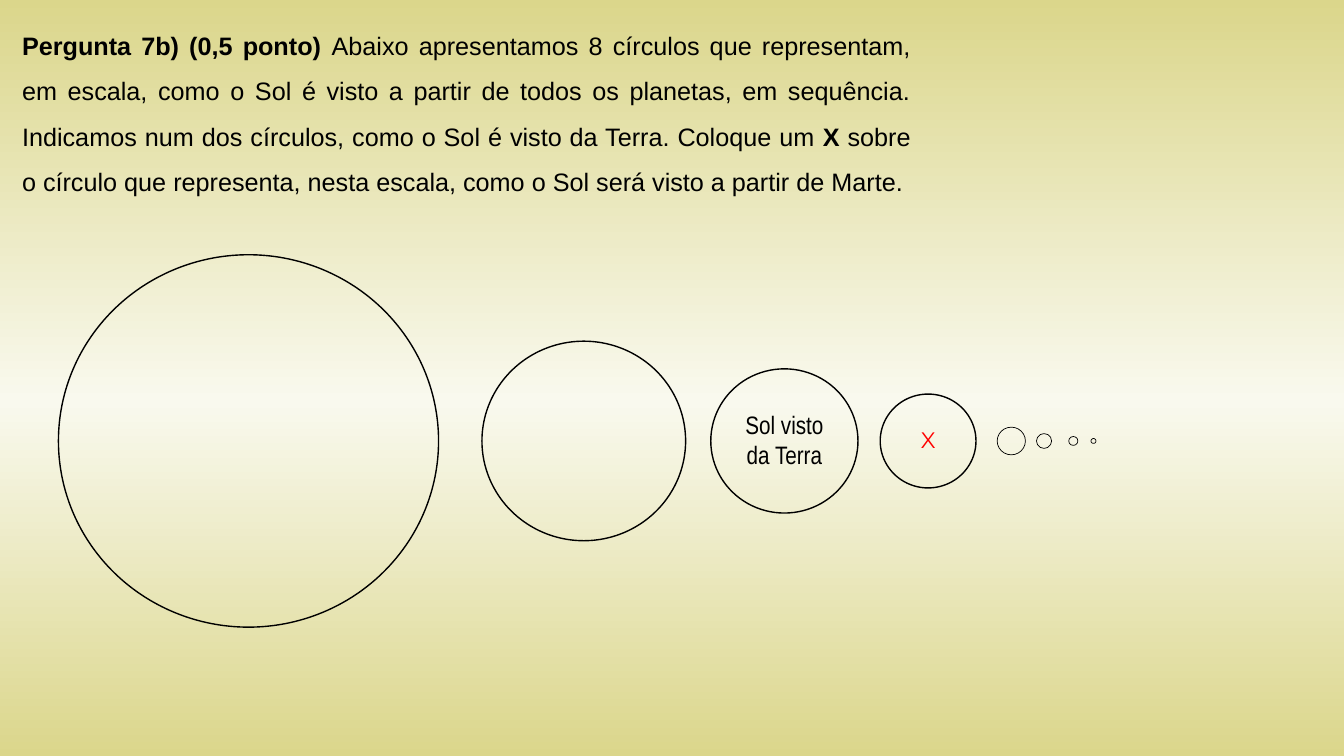
from copy import deepcopy

from pptx import Presentation
from pptx.dml.color import RGBColor
from pptx.enum.shapes import MSO_SHAPE
from pptx.enum.text import PP_ALIGN
from pptx.oxml.ns import qn
from pptx.util import Inches, Pt

COLORS = {"edge": "DBD68B", "middle": "F9F9EE", "ink": "000000", "answer": "FF0000"}

AXIS = 4.375   # height of the line through all the centres
RATIO = 0.98   # height of a circle as a share of its width
# left, width and outline of the Sun as seen from each planet, in sequence
SUNS = [
    (0.58, 3.77, 1), (4.78, 2.02, 1), (7.05, 1.46, 1), (8.73, 0.95, 1),
    (9.89, 0.28, 0.5), (10.28, 0.15, 0.5), (10.6, 0.09, 0.5), (10.82, 0.05, 0.5),
]

QUESTION = [
    ("Pergunta 7b) (0,5 ponto) ", True),
    ("Abaixo apresentamos 8 círculos que representam, em escala, como o Sol é visto "
     "a partir de todos os planetas, em sequência. Indicamos num dos círculos, como o "
     "Sol é visto da Terra. Coloque um ", False),
    ("X", True),
    (" sobre o círculo que representa, nesta escala, como o Sol será visto a partir "
     "de Marte.", False),
]


def color(name):
    return RGBColor.from_string(COLORS[name])


def paint_background(s):
    fill = s.background.fill
    fill.gradient()
    fill.gradient_angle = 270
    # A third stop goes between the two default ones
    stops = s._element.find(".//" + qn("a:gsLst"))
    stops.insert(1, deepcopy(stops[0]))
    for stop, (name, place) in zip(
            fill.gradient_stops, [("edge", 0), ("middle", 0.53), ("edge", 1)]):
        stop.color.rgb = color(name)
        stop.position = place


def add_text(s, box, runs, font, size, name="ink", align=PP_ALIGN.LEFT, spacing=1.0):
    tf = s.shapes.add_textbox(*map(Inches, box)).text_frame
    tf.word_wrap = True
    p = tf.paragraphs[0]
    p.alignment = align
    p.line_spacing = spacing
    for text, bold in runs:
        r = p.add_run()
        r.text = text
        r.font.name = font
        r.font.size = Pt(size)
        r.font.bold = bold
        r.font.color.rgb = color(name)


def add_sun(s, left, width, line):
    height = width * RATIO
    sp = s.shapes.add_shape(MSO_SHAPE.OVAL, Inches(left), Inches(AXIS - height / 2),
                            Inches(width), Inches(height))
    sp.shadow.inherit = False
    sp.fill.background()
    sp.line.color.rgb = color("ink")
    sp.line.width = Pt(line)


def add_suns(s):
    for sun in SUNS:
        add_sun(s, *sun)
    # Label of the Earth circle
    left, width, _ = SUNS[2]
    add_text(s, (left + (width - 1.15) / 2, 4.01, 1.15, 1.02),
             [("Sol visto da Terra", False)], "Arial Narrow", 18, align=PP_ALIGN.CENTER)
    # Answer mark on the Mars circle
    left, width, _ = SUNS[3]
    add_text(s, (left + (width - 0.34) / 2, 4.18, 0.34, 0.33),
             [("X", False)], "Montserrat", 16, "answer")


def main():
    prs = Presentation()
    prs.slide_width, prs.slide_height = Inches(13.33), Inches(7.5)
    s = prs.slides.add_slide(prs.slide_layouts[6])
    paint_background(s)
    add_text(s, (0.12, 0.1, 9.01, 1.87), QUESTION, "Arial", 18,
             align=PP_ALIGN.JUSTIFY, spacing=1.5)
    add_suns(s)
    prs.save("out.pptx")


if __name__ == "__main__":
    main()
